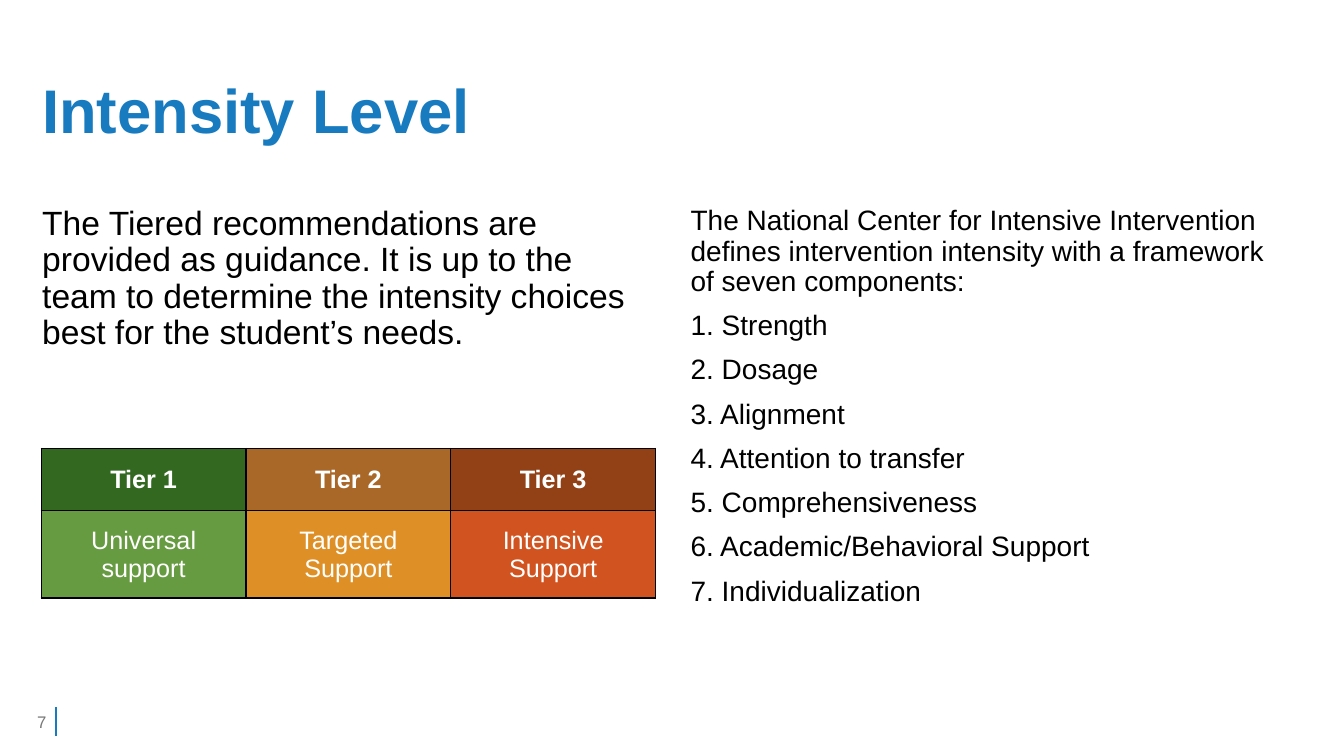
from lxml.etree import SubElement
from pptx import Presentation
from pptx.dml.color import RGBColor
from pptx.enum.shapes import MSO_CONNECTOR
from pptx.enum.text import MSO_ANCHOR, MSO_AUTO_SIZE, PP_ALIGN
from pptx.oxml import parse_xml
from pptx.oxml.ns import nsdecls, qn
from pptx.util import Cm, Pt

BLUE = RGBColor(0x18, 0x7B, 0xC0)
GREY = RGBColor(0x78, 0x78, 0x78)
BLACK = RGBColor(0, 0, 0)
WHITE = RGBColor(0xFF, 0xFF, 0xFF)

TITLE = "Intensity Level"
GUIDE = ["The Tiered recommendations are provided as guidance. It is up to the "
         "team to determine the intensity choices best for the student’s needs."]
INTRO = ("The National Center for Intensive Intervention defines intervention "
         "intensity with a framework of seven components:")
PARTS = ["Strength", "Dosage", "Alignment", "Attention to transfer",
         "Comprehensiveness", "Academic/Behavioral Support", "Individualization"]
# name, support, header fill, support fill
TIERS = [
    ("Tier 1", "Universal support", RGBColor(0x32, 0x68, 0x20), RGBColor(0x66, 0x9B, 0x41)),
    ("Tier 2", "Targeted Support", RGBColor(0xA9, 0x67, 0x28), RGBColor(0xDE, 0x90, 0x27)),
    ("Tier 3", "Intensive Support", RGBColor(0x91, 0x41, 0x15), RGBColor(0xD1, 0x54, 0x20)),
]
PAGE = "7"

LEFT, TOP = 0.81, 5.08
WIDE, HIGH = 15.7, 12.09
STEP = 16.34
COL = 5.16
ROWS = (1.57, 2.2)
RULE = 1.42


def style(par, size, color, bold=False):
    for run in par.runs:
        font = run.font
        font.name, font.size, font.bold = "Arial", Pt(size), bold
        font.color.rgb = color


def place(shape, x, y, w, h):
    shape.left, shape.top, shape.width, shape.height = Cm(x), Cm(y), Cm(w), Cm(h)


def fill_body(shape, col, lines, size):
    """Put unbulleted paragraphs into a body placeholder in the given column."""
    place(shape, LEFT + col * STEP, TOP, WIDE, HIGH)
    frame = shape.text_frame
    frame.text = "\n".join(lines)
    frame.auto_size = MSO_AUTO_SIZE.NONE
    for i, par in enumerate(frame.paragraphs):
        par.line_spacing = 0.9
        par.space_before = Pt(10 if i else 0)
        props = par._p.get_or_add_pPr()
        props.set("marL", "0")
        props.set("indent", "0")
        SubElement(props, qn("a:buNone"))
        style(par, size, BLACK)


def add_border(cell):
    props = cell._tc.get_or_add_tcPr()
    for i, side in enumerate("LRTB"):
        props.insert(i, parse_xml(
            f'<a:ln{side} {nsdecls("a")} w="12700"><a:solidFill>'
            f'<a:srgbClr val="{BLACK}"/></a:solidFill></a:ln{side}>'))


def add_tiers(slide):
    table = slide.shapes.add_table(
        len(ROWS), len(TIERS), Cm(1.04), Cm(11.3),
        Cm(COL * len(TIERS)), Cm(sum(ROWS))).table
    table.first_row = table.horz_banding = False
    for row, high in zip(table.rows, ROWS):
        row.height = Cm(high)
    for c, (name, support, dark, light) in enumerate(TIERS):
        table.columns[c].width = Cm(COL)
        for r, (text, color) in enumerate(((name, dark), (support, light))):
            cell = table.cell(r, c)
            cell.text = text
            cell.vertical_anchor = MSO_ANCHOR.MIDDLE
            cell.fill.solid()
            cell.fill.fore_color.rgb = color
            add_border(cell)
            par = cell.text_frame.paragraphs[0]
            par.alignment = PP_ALIGN.CENTER
            style(par, 18, WHITE, bold=r == 0)


def add_page(slide):
    line = slide.shapes.add_connector(
        MSO_CONNECTOR.STRAIGHT, Cm(RULE), Cm(17.81), Cm(RULE), Cm(18.54))
    line.line.color.rgb = BLUE
    line.line.width = Pt(1.5)
    SubElement(line._element.spPr, qn("a:effectLst"))
    box = slide.shapes.add_textbox(Cm(0), Cm(17.68), Cm(RULE), Cm(1.02))
    frame = box.text_frame
    frame.word_wrap = True
    frame.vertical_anchor = MSO_ANCHOR.MIDDLE
    frame.text = PAGE
    par = frame.paragraphs[0]
    par.alignment = PP_ALIGN.RIGHT
    style(par, 12, GREY)


def main():
    deck = Presentation()
    deck.slide_width, deck.slide_height = Cm(33.87), Cm(19.05)
    slide = deck.slides.add_slide(deck.slide_layouts.get_by_name("Two Content"))
    title, left, right = slide.placeholders

    place(title, LEFT, 1.02, 32.03, 3.68)
    frame = title.text_frame
    frame.text = TITLE
    frame.auto_size = MSO_AUTO_SIZE.NONE
    frame.vertical_anchor = MSO_ANCHOR.MIDDLE
    par = frame.paragraphs[0]
    par.alignment = PP_ALIGN.LEFT
    par.line_spacing = 0.9
    style(par, 44, BLUE, bold=True)

    fill_body(left, 0, GUIDE, 24)
    items = [f"{n}. {part}" for n, part in enumerate(PARTS, 1)]
    fill_body(right, 1, [INTRO] + items, 20)
    add_tiers(slide)
    add_page(slide)
    deck.save("out.pptx")


if __name__ == "__main__":
    main()
